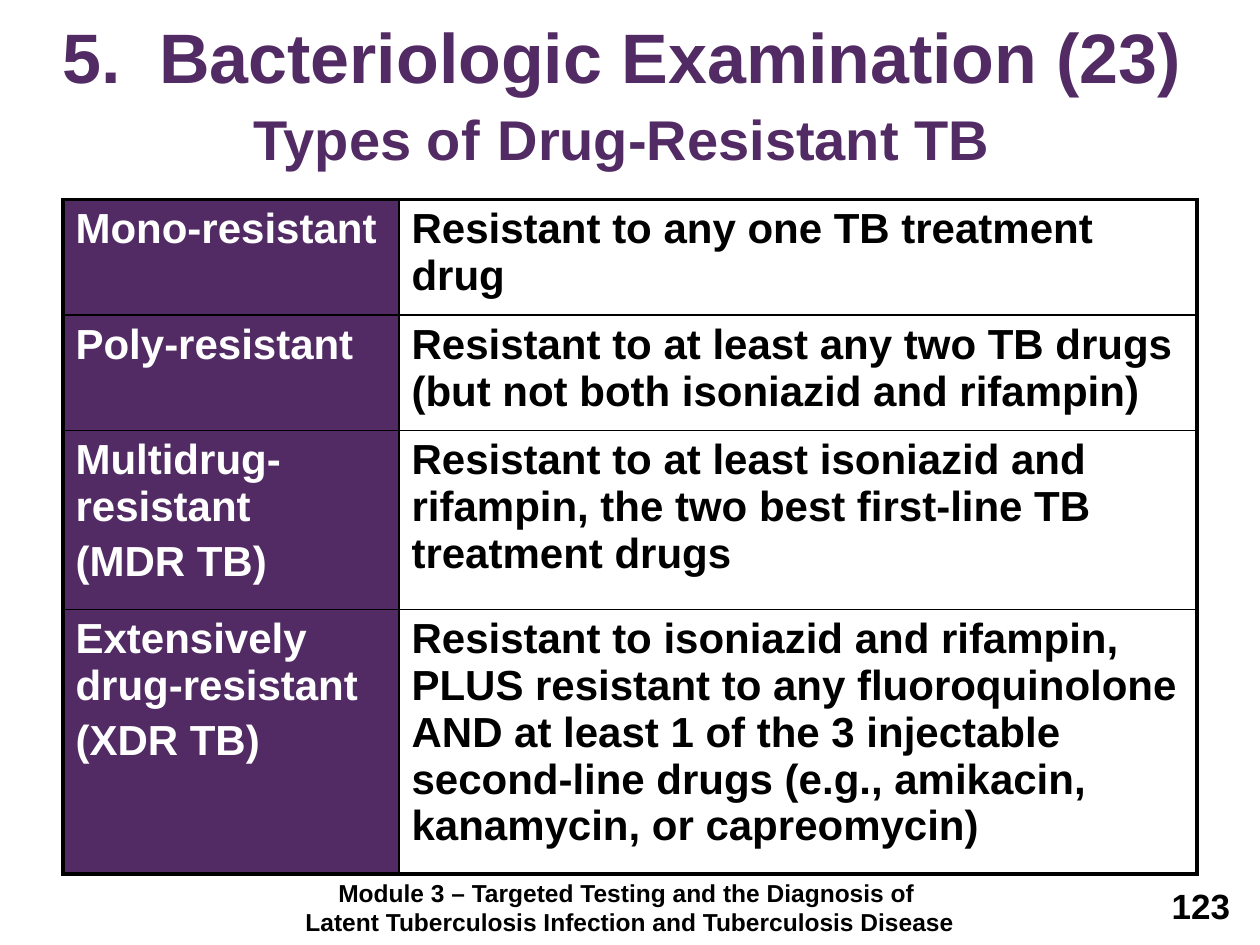
from lxml import etree
from pptx import Presentation
from pptx import util as u
from pptx.dml.color import RGBColor
from pptx.enum import text
from pptx.oxml import ns

PURPLE, BLACK, WHITE = "532B64", "000000", "FFFFFF"
OUTER, INNER = 2.25, 1


def colour(value):
    return RGBColor.from_string(value)


class Page:
    def __init__(self, deck):
        self.slide = deck.slides.add_slide(deck.slide_layouts[6])
        self.font = {"name": "Arial", "bold": True}

    def span(self, para, words, size, ink):
        span = para.add_run()
        span.text = words
        for key, value in {**self.font, "size": u.Pt(size)}.items():
            setattr(span.font, key, value)
        span.font.color.rgb = colour(ink)

    def box(self, place, paras, ink, align, anchor=text.MSO_ANCHOR.TOP):
        box = self.slide.shapes.add_textbox(*map(u.Pt, place))
        frame = box.text_frame
        for key, value in {"word_wrap": True, "vertical_anchor": anchor}.items():
            setattr(frame, key, value)
        for index, spans in enumerate(paras):
            para = frame.add_paragraph() if index else frame.paragraphs[0]
            para.alignment = align
            for words, size in spans:
                self.span(para, words, size, ink)

    def borders(self, cell, widths):
        props = cell._tc.get_or_add_tcPr()
        for index, (side, width) in enumerate(widths.items()):
            line = etree.Element(ns.qn(f"a:ln{side}"), w=str(u.Pt(width)))
            fill = etree.SubElement(line, ns.qn("a:solidFill"))
            etree.SubElement(fill, ns.qn("a:srgbClr"), val=BLACK)
            props.insert(index, line)

    def cell(self, cell, lines, size, ink, back):
        for index, words in enumerate(lines):
            frame = cell.text_frame
            para = frame.add_paragraph() if index else frame.paragraphs[0]
            if index:
                para.space_before = u.Pt(size * 0.2)
            self.span(para, words, size, ink)
        if back:
            cell.fill.solid()
            cell.fill.fore_color.rgb = colour(back)
        else:
            cell.fill.background()

    def table(self, place, widths, heights, rows, size):
        last_row, last_column = len(heights) - 1, len(widths) - 1
        frame = self.slide.shapes.add_table(
            len(heights), len(widths), *map(u.Pt, place))
        table = frame.table
        for flag in ("first_row", "horz_banding"):
            setattr(table, flag, False)
        for column, width in zip(table.columns, widths):
            column.width = u.Pt(width)
        for r, (height, row) in enumerate(zip(heights, rows)):
            table.rows[r].height = u.Pt(height)
            for c, lines in enumerate(row):
                cell = table.cell(r, c)
                ink, back = (BLACK, None) if c else (WHITE, PURPLE)
                self.cell(cell, lines, size, ink, back)
                self.borders(cell, {
                    "L": INNER if c else OUTER,
                    "R": OUTER if c == last_column else INNER,
                    "T": INNER if r else OUTER,
                    "B": OUTER if r == last_row else INNER,
                })


def main():
    deck = Presentation()
    deck.slide_width, deck.slide_height = u.Pt(720), u.Pt(540)
    page = Page(deck)
    centre, right = text.PP_ALIGN.CENTER, text.PP_ALIGN.RIGHT

    page.box((18, 498.2, 684, 37.4), [
        [("Module 3 – Targeted Testing and the Diagnosis of ", 14)],
        [("Latent Tuberculosis Infection and Tuberculosis Disease", 14)],
    ], BLACK, centre)
    page.box((542.2, 501.8, 167.8, 37.4), [[("123", 20)]], BLACK, right)
    page.box((12.2, 12.2, 686.2, 90), [
        [("5.  Bacteriologic Examination (23)", 40)],
        [("Types of", 32), (" ", 36), ("Drug-Resistant TB", 32)],
    ], PURPLE, centre, text.MSO_ANCHOR.BOTTOM)

    rows = [
        (["Mono-resistant"], ["Resistant to any one TB treatment drug"]),
        (["Poly-resistant"],
         ["Resistant to at least any two TB drugs "
          "(but not both isoniazid and rifampin)"]),
        (["Multidrug- resistant", "(MDR TB)"],
         ["Resistant to at least isoniazid and rifampin, "
          "the two best first-line TB treatment drugs"]),
        (["Extensively drug-resistant", "(XDR TB)"],
         ["Resistant to isoniazid and rifampin, PLUS resistant to any "
          "fluoroquinolone AND at least 1 of the 3 injectable second-line "
          "drugs (e.g., amikacin, kanamycin, or capreomycin)"]),
    ]
    page.table((36, 114, 648, 385.4), (192, 456),
               (66, 66, 102.2, 151.2), rows, 24)
    deck.save("out.pptx")


if __name__ == "__main__":
    main()
